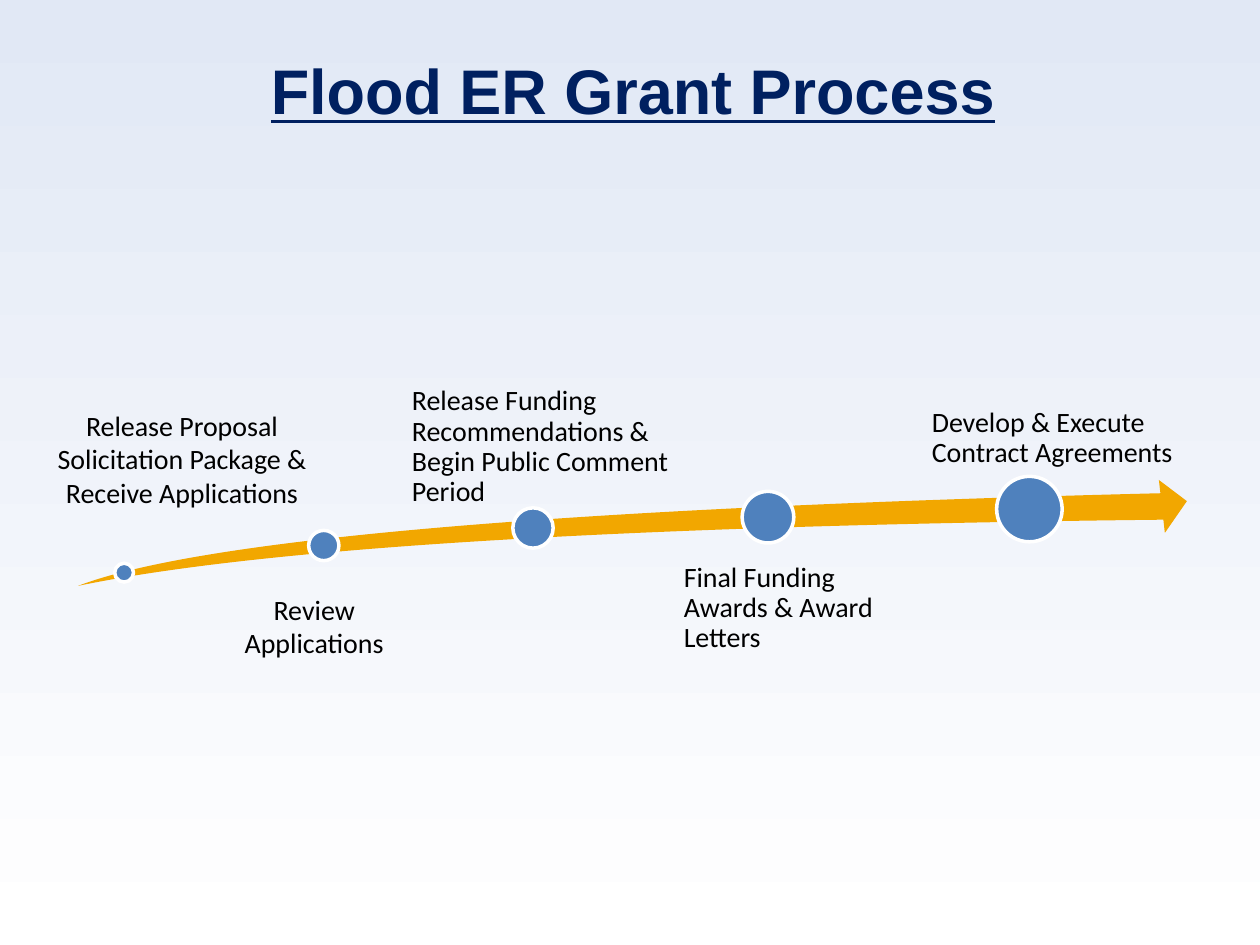
"""Build the Flood ER Grant Process slide: five milestones along a rising arrow."""
from pptx import Presentation
from pptx.dml.color import RGBColor
from pptx.enum.shapes import MSO_SHAPE
from pptx.enum.text import MSO_ANCHOR, PP_ALIGN
from pptx.util import Inches, Pt

SWOOSH, ELLIPSE = MSO_SHAPE.SWOOSH_ARROW, MSO_SHAPE.OVAL
TOP, MIDDLE = MSO_ANCHOR.TOP, MSO_ANCHOR.MIDDLE
LEFT, CENTER = PP_ALIGN.LEFT, PP_ALIGN.CENTER

NAVY = RGBColor(0x00, 0x20, 0x60)
GOLD = RGBColor(0xF2, 0xA7, 0x00)
BLUE = RGBColor(0x4F, 0x81, 0xBD)
PALE = RGBColor(0xE1, 0xE8, 0xF5)
WHITE = RGBColor(0xFF, 0xFF, 0xFF)
BLACK = RGBColor(0x00, 0x00, 0x00)

TITLE_FONT = {"name": "Arial", "size": Pt(36), "bold": True, "underline": True}
LABEL_FONT = {"name": "Calibri", "size": Pt(16)}

deck = Presentation()
deck.slide_width, deck.slide_height = Inches(10), Inches(7.5)
COL, ROW = deck.slide_width / 100, deck.slide_height / 100
slide = deck.slides.add_slide(deck.slide_layouts[6])

backdrop = slide.background.fill
backdrop.gradient()
backdrop.gradient_angle = 270
for stop, color in zip(backdrop.gradient_stops, (PALE, WHITE)):
    stop.color.rgb = color


def add_solid(kind, left, top, width, height, color):
    solid = slide.shapes.add_shape(kind, int(left), int(top), int(width), int(height))
    solid.shadow.inherit = False
    solid.fill.solid()
    solid.fill.fore_color.rgb = color
    solid.line.fill.background()
    return solid


def add_words(words, box, inset, anchor, paragraph_format, font_format, color):
    left, top, width, height = box
    frame = slide.shapes.add_textbox(
        int(left * COL), int(top * ROW), int(width * COL), int(height * ROW)
    ).text_frame
    frame_format = {"word_wrap": True, "vertical_anchor": anchor, "margin_left": int(inset),
                    "margin_right": 0, "margin_top": 0, "margin_bottom": 0}
    paragraph = frame.paragraphs[0]
    run = paragraph.add_run()
    run.text = words
    run.font.color.rgb = color
    for target, values in ((frame, frame_format), (paragraph, paragraph_format),
                           (run.font, font_format)):
        for key, value in values.items():
            setattr(target, key, value)


add_words("Flood ER Grant Process", (6.4, 5.6, 87.7, 7.73), 0, MIDDLE,
          {"alignment": CENTER}, TITLE_FONT, NAVY)

arrow = add_solid(SWOOSH, 6.2 * COL, 50.8 * ROW, 88 * COL, 11.2 * ROW, GOLD)
arrow.adjustments[0] = arrow.adjustments[1] = 0.25

milestones = [
    ("Release Proposal Solicitation Package & Receive Applications",
     (9.85, 60.6), 1.5, (3.6, 43.2, 20.9, 13.47), CENTER, 1.0),
    ("Review Applications",
     (25.7, 57.73), 2.4, (14.8, 62.67, 19, 7.2), CENTER, 1.0),
    ("Release Funding Recommendations & Begin Public Comment Period",
     (42.3, 55.87), 3.2, (31, 40.93, 22.3, 13.6), LEFT, 0.9),
    ("Final Funding Awards & Award Letters",
     (60.95, 54.73), 4.1, (52.1, 59.6, 20.4, 12.27), LEFT, 0.9),
    ("Develop & Execute Contract Agreements",
     (81.7, 53.87), 5.2, (71.2, 43.2, 24.1, 7.2), LEFT, 0.9),
]
for step, (across, down), diameter, box, alignment, spacing in milestones:
    size = diameter * COL
    dot = add_solid(ELLIPSE, across * COL - size / 2, down * ROW - size / 2, size, size, BLUE)
    dot.line.color.rgb = WHITE
    dot.line.width = Pt(2)
    add_words(step, box, size * 0.53, TOP,
              {"alignment": alignment, "line_spacing": spacing}, LABEL_FONT, BLACK)

deck.save("out.pptx")
